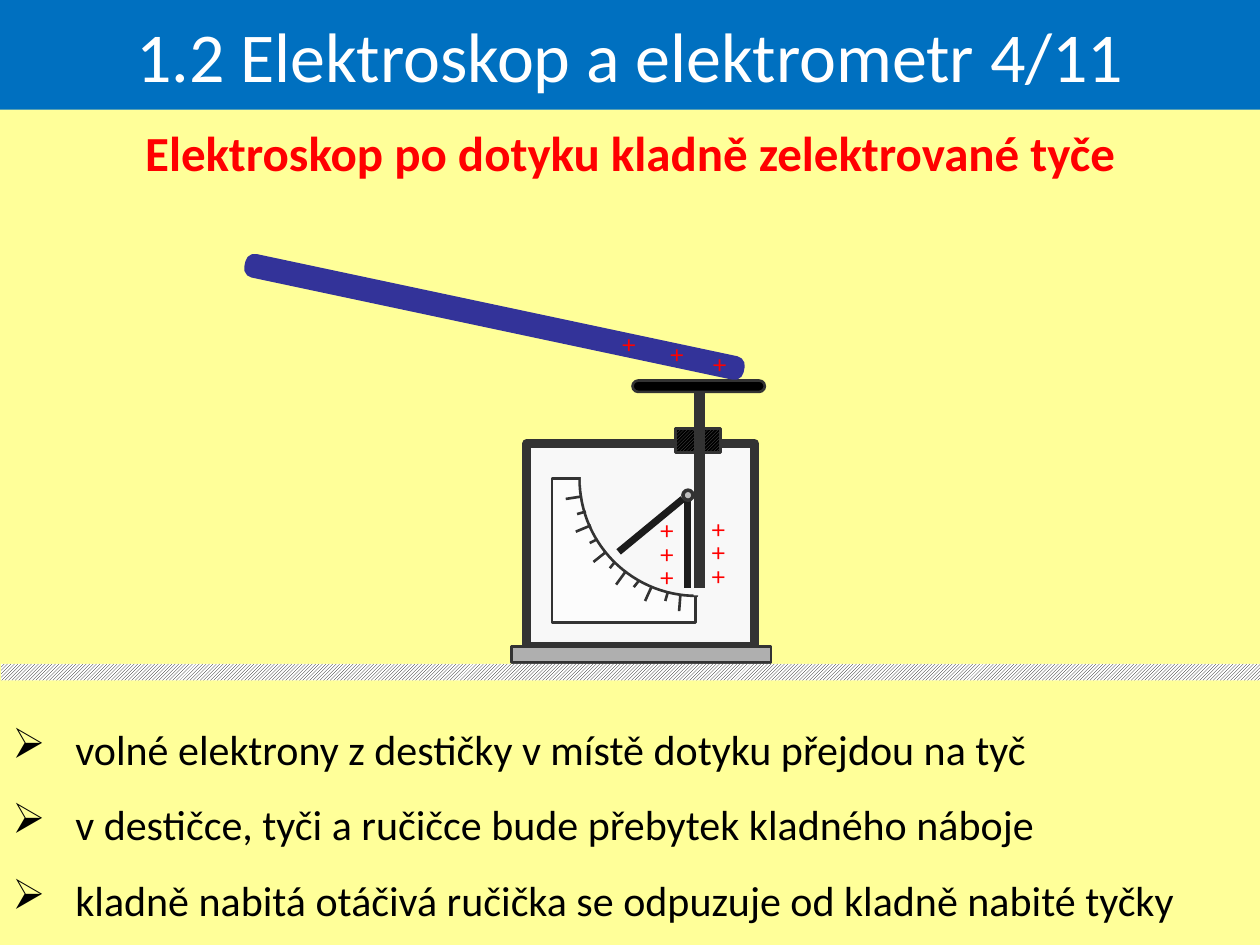
from math import cos, sin, pi
from pptx import Presentation
from pptx.dml.color import RGBColor
from pptx.enum.dml import MSO_PATTERN
from pptx.enum.shapes import MSO_CONNECTOR, MSO_SHAPE
from pptx.enum.text import MSO_ANCHOR, PP_ALIGN
from pptx.oxml.ns import qn
from pptx.util import Inches, Pt
from lxml.etree import SubElement

prs = Presentation()
prs.slide_width, prs.slide_height = Inches(10), Inches(7.5)
slide = prs.slides.add_slide(prs.slide_layouts[6])
color = RGBColor.from_string
slide.background.fill.solid()
slide.background.fill.fore_color.rgb = color("FFFF99")


def style(shape, fill, line=None, width=1.5, pattern_back=None):
    shape.shadow.inherit = False
    if pattern_back:
        shape.fill.patterned()
        shape.fill.pattern = MSO_PATTERN.DARK_UPWARD_DIAGONAL
        shape.fill.back_color.rgb = color(pattern_back)
    else:
        shape.fill.solid()
    shape.fill.fore_color.rgb = color(fill)
    if line:
        shape.line.color.rgb = color(line)
        shape.line.width = Pt(width)
    else:
        shape.line.fill.background()
    return shape


def write(shape, lines, size, font, ink, align=PP_ALIGN.LEFT, spacing=1.0, wrap=True, bold=False):
    frame = shape.text_frame
    frame.word_wrap = wrap
    for i, line in enumerate(lines):
        paragraph = frame.paragraphs[0] if i == 0 else frame.add_paragraph()
        paragraph.alignment = align
        paragraph.line_spacing = spacing
        run = paragraph.add_run()
        run.text = line
        run.font.size = Pt(size)
        run.font.name = font
        run.font.bold = bold
        run.font.color.rgb = color(ink)
    return frame


shapes = slide.shapes
RECT, ROUND = MSO_SHAPE.RECTANGLE, MSO_SHAPE.ROUNDED_RECTANGLE
DARK = "333333"

subtitle = shapes.add_textbox(0, Inches(0.92), Inches(10), Inches(0.57))
write(subtitle, ["Elektroskop po dotyku kladně zelektrované tyče"], 28, "Calibri", "FF0000",
      PP_ALIGN.CENTER, bold=True)

facts = shapes.add_textbox(0, Inches(5.49), Inches(10), Inches(1.92))
facts_frame = write(facts, [
    "volné elektrony z destičky v místě dotyku přejdou na tyč",
    "v destičce, tyči a ručičce bude přebytek kladného náboje",
    "kladně nabitá otáčivá ručička se odpuzuje od kladně nabité tyčky",
], 24, "Calibri", "000000", spacing=1.5)
for paragraph in facts_frame.paragraphs:
    properties = paragraph._p.get_or_add_pPr()
    properties.set("marL", str(Inches(0.5)))
    properties.set("indent", str(Inches(-0.5)))
    SubElement(properties, qn("a:buChar")).set("char", "➢")

housing = shapes.add_shape(RECT, Inches(4.18), Inches(3.52), Inches(1.81), Inches(1.61))
style(housing, "F8F8F8", DARK, 5)
base = shapes.add_shape(RECT, Inches(4.06), Inches(5.13), Inches(2.06), Inches(0.13))
style(base, "AFAFAF", DARK)
scale_plate = shapes.add_shape(RECT, Inches(4.38), Inches(3.8), Inches(1.14), Inches(1.14))
style(scale_plate, "FFFFFF", DARK)
plate_color = scale_plate.fill._xPr.find(qn("a:solidFill"))[0]
SubElement(plate_color, qn("a:alpha")).set("val", "58000")

arc_x, arc_y, arc_radius = 5.53, 3.8, 0.93
arc = [(Inches(arc_x - arc_radius * sin(step * pi / 60)),
        Inches(arc_y + arc_radius * cos(step * pi / 60))) for step in range(31)]
dial = shapes.build_freeform(*arc[0], scale=1.0)
dial.add_line_segments(arc[1:] + [(Inches(arc_x), Inches(arc_y))], close=True)
style(dial.convert_to_shape(), "F8F8F8", DARK)

for left, top, turn in [(4.61, 3.78, 0), (5.09, 4.24, 270)]:
    dial_edge = shapes.add_shape(RECT, Inches(left), Inches(top), Inches(0.9), Inches(0.07))
    style(dial_edge, "F8F8F8").rotation = turn

stopper = shapes.add_shape(RECT, Inches(5.36), Inches(3.4), Inches(0.36), Inches(0.19))
style(stopper, "5F5F5F", DARK, pattern_back="000000")

ticks = [
    (5.4, 4.72, 5.39, 4.85), (5.3, 4.7, 5.28, 4.77), (5.17, 4.66, 5.12, 4.77),
    (5.07, 4.61, 5.03, 4.66), (4.97, 4.53, 4.89, 4.64), (4.88, 4.46, 4.84, 4.51),
    (4.81, 4.38, 4.71, 4.46), (4.74, 4.28, 4.68, 4.31), (4.69, 4.17, 4.57, 4.22),
    (4.65, 4.06, 4.58, 4.08), (4.62, 3.94, 4.49, 3.96),
]
stem = (5.55, 3.09, 5.55, 4.67)
needles = [(5.46, 3.97, 5.46, 4.67), (5.42, 3.96, 4.91, 4.38)]
strokes = [(tick, DARK, 1.5) for tick in ticks] + [(stem, DARK, 6)]
strokes += [(needle, "1C1C1C", 4) for needle in needles]
for ends, ink, width in strokes:
    stroke = shapes.add_connector(MSO_CONNECTOR.STRAIGHT, *[Inches(value) for value in ends])
    stroke.line.color.rgb = color(ink)
    stroke.line.width = Pt(width)
    SubElement(stroke._element.spPr, qn("a:effectLst"))

contact_plate = shapes.add_shape(ROUND, Inches(5.02), Inches(3.02), Inches(1.05), Inches(0.09))
style(contact_plate, "000000", DARK).adjustments[0] = 0.5
pivot = shapes.add_shape(MSO_SHAPE.OVAL, Inches(5.42), Inches(3.89), Inches(0.08), Inches(0.08))
style(pivot, "C0C0C0", DARK, 2)
table_top = shapes.add_shape(RECT, Inches(0.01), Inches(5.27), Inches(10), Inches(0.13))
style(table_top, "000000", pattern_back="FFFFFF")

rod = shapes.add_shape(ROUND, Inches(1.91), Inches(2.43), Inches(4.03), Inches(0.17))
style(rod, "333399", "333399").rotation = 12
rod.adjustments[0] = 0.38

for left, top, height, count in [
    (5.54, 4.09, 0.66, 3), (5.13, 4.1, 0.66, 3),
    (5.55, 2.78, 0.29, 1), (5.21, 2.7, 0.29, 1), (4.83, 2.62, 0.29, 1),
]:
    charges = shapes.add_textbox(Inches(left), Inches(top), Inches(0.35), Inches(height))
    write(charges, ["+"] * count, 16, "Montserrat", "FF0000", spacing=0.7, wrap=False)

title = style(shapes.add_shape(RECT, 0, 0, Inches(10), Inches(0.87)), "0070C0")
title_frame = write(title, ["1.2 Elektroskop a elektrometr 4/11"], 40, "Calibri", "FFFFFF",
                    PP_ALIGN.CENTER)
title_frame.vertical_anchor = MSO_ANCHOR.MIDDLE

prs.save("out.pptx")
